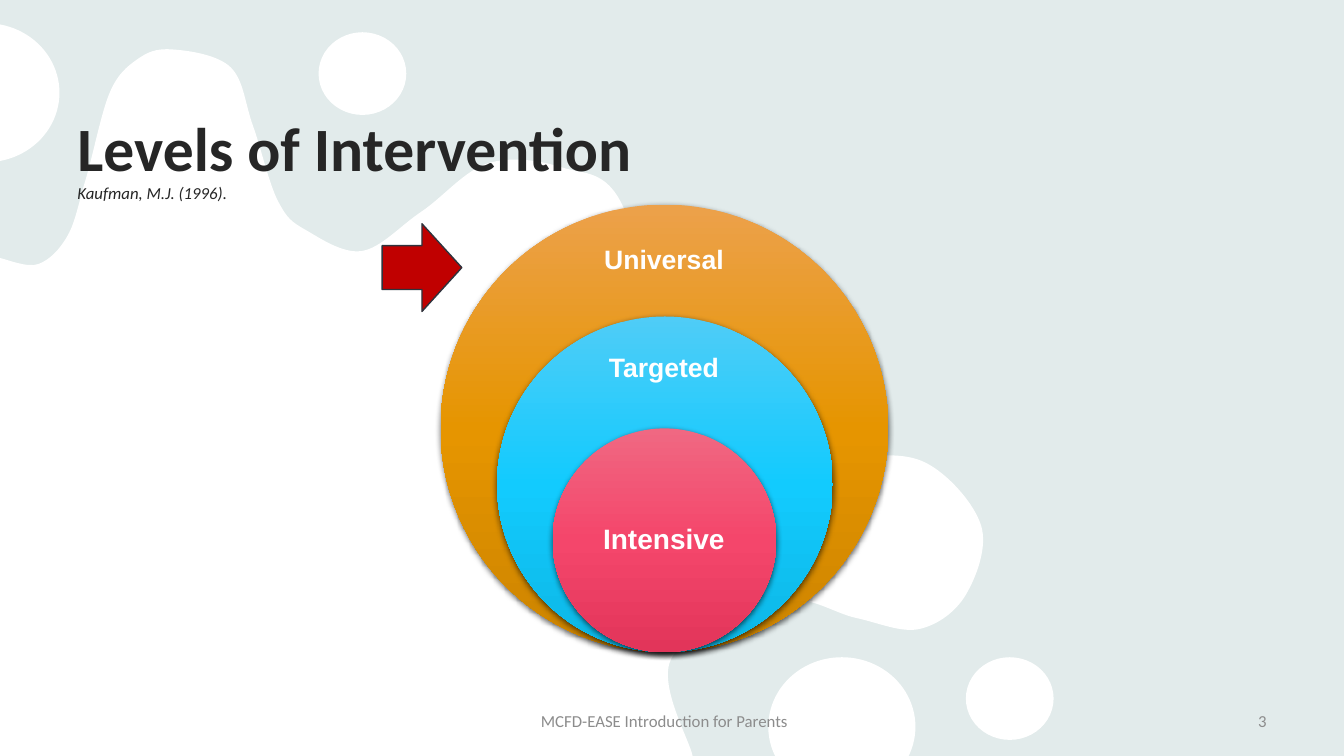
from copy import deepcopy
from dataclasses import dataclass

from lxml import etree
from pptx import Presentation
from pptx import util as u
from pptx.dml.color import RGBColor
from pptx.enum import shapes, text
from pptx.oxml.ns import qn

PX = u.Inches(1) // 100  # EMU in one px, 100 px to the inch
WIDTH, HEIGHT = 1333, 750


@dataclass(frozen=True)
class Theme:
    backdrop: str = "E9F3F3"
    veil: str = "AEAEAE"
    white: str = "FFFFFF"
    ink: str = "262626"
    muted: str = "8C8C8C"
    arrow: str = "C00000"
    arrow_edge: str = "2F333D"
    shadow: str = "000000"
    universal: tuple = ("ECA14B", "E69500", "CC8400")
    targeted: tuple = ("4FCCF7", "12CBFE", "0DB6E5")
    intensive: tuple = ("F06882", "F4466B", "E2355A")
    body_font: str = "Calibri"
    label_font: str = "Arial"
    title_size: int = 44
    small_size: int = 12
    label_size: int = 19
    core_size: int = 20


THEME = Theme()

# Points on the edge of the white wave, from the left side to the bottom
WAVE = [(0, 256), (38, 262), (67, 234), (85, 178), (108, 94), (136, 59), (170, 49),
        (229, 67), (251, 125), (276, 200), (303, 228), (359, 249), (418, 210),
        (484, 162), (557, 166), (618, 205), (660, 389), (758, 455), (844, 452),
        (918, 459), (973, 521), (958, 590), (912, 624), (849, 613), (771, 596),
        (666, 653), (687, 750)]
SMALL_DROP, LARGE_DROP = (87, 82), (146, 138)


def px(*lengths):
    return [u.Emu(length * PX) for length in lengths]


def rgb(color):
    return RGBColor.from_string(color)


def paint(solid, color):
    solid.shadow.inherit = False
    solid.fill.solid()
    solid.fill.fore_color.rgb = rgb(color)
    solid.line.fill.background()


def add_solid(parent, kind, box, color):
    solid = parent.add_shape(kind, *px(*box))
    paint(solid, color)
    return solid


def add_veil(parent):
    """Tint the whole slide with a layer of 10 % opacity."""
    veil = add_solid(parent, shapes.MSO_SHAPE.RECTANGLE, (0, 0, WIDTH, HEIGHT), THEME.veil)
    color = next(veil._element.iter(qn("a:srgbClr")))
    etree.SubElement(color, qn("a:alpha"), val="10000")


def smooth(points):
    """Give two control points and an end point for each step of a Catmull-Rom curve."""
    padded = [points[0], *points, points[-1]]
    curve = []
    for before, start, end, after in zip(padded, padded[1:], padded[2:], padded[3:]):
        curve.append([s + (e - b) / 6 for b, s, e in zip(before, start, end)])
        curve.append([e - (a - s) / 6 for s, e, a in zip(start, end, after)])
        curve.append(end)
    return curve


def add_wave(parent, points, color):
    """Fill the area between a smooth edge and the lower left corner of the slide."""
    curve = smooth(points)
    builder = parent.build_freeform(*points[0], scale=PX)
    builder.add_line_segments([*curve, (0, HEIGHT)], close=True)
    wave = builder.convert_to_shape()
    paint(wave, color)
    lines = list(wave._element.iter(qn("a:lnTo")))
    for first in range(0, len(curve), 3):
        bend = etree.Element(qn("a:cubicBezTo"))
        lines[first].addprevious(bend)
        for line in lines[first:first + 3]:
            bend.append(line[0])
            line.getparent().remove(line)


def add_text(parent, box, lines, *, font=THEME.body_font, color=THEME.ink, inset=(10, 5),
             align=text.PP_ALIGN.LEFT, anchor=text.MSO_ANCHOR.MIDDLE, spacing=1.0):
    """Place one paragraph; lines holds (words, size, bold, italic), a break between them."""
    frame = parent.add_textbox(*px(*box)).text_frame
    frame.word_wrap = True
    frame.vertical_anchor = anchor
    frame.margin_left = frame.margin_right = inset[0] * PX
    frame.margin_top = frame.margin_bottom = inset[1] * PX
    paragraph = frame.paragraphs[0]
    paragraph.alignment = align
    paragraph.line_spacing = spacing
    for index, (words, size, bold, italic) in enumerate(lines):
        if index:
            paragraph.add_line_break()
        run = paragraph.add_run()
        run.text = words
        run.font.name = font
        run.font.size = u.Pt(size)
        run.font.bold = bold
        run.font.italic = italic
        run.font.color.rgb = rgb(color)


def add_level(parent, diameter, gradient, label, label_box, size, inset):
    """Add one circle, resting on the common bottom point, and its label."""
    center, bottom = 659, 647
    box = (center - diameter // 2, bottom - diameter, diameter, diameter)
    level = add_solid(parent, shapes.MSO_SHAPE.OVAL, box, gradient[0])
    level.fill.gradient()
    level.fill.gradient_angle = 270
    stops = next(level._element.iter(qn("a:gsLst")))
    stops.append(deepcopy(stops[-1]))
    for stop, color, position in zip(level.fill.gradient_stops, gradient, (0, 0.5, 1)):
        stop.color.rgb = rgb(color)
        stop.position = position

    effects = next(level._element.iter(qn("a:effectLst")))
    shadow = etree.SubElement(effects, qn("a:outerShdw"), blurRad=str(u.Pt(4.5)),
                              dist=str(u.Pt(1.5)), dir="5400000", rotWithShape="0")
    color = etree.SubElement(shadow, qn("a:srgbClr"), val=THEME.shadow)
    etree.SubElement(color, qn("a:alpha"), val="63000")

    add_text(parent, label_box, [(label, size, True, False)], font=THEME.label_font,
             color=THEME.white, inset=(inset, inset), align=text.PP_ALIGN.CENTER, spacing=0.9)


def main():
    deck = Presentation()
    deck.slide_width, deck.slide_height = px(WIDTH, HEIGHT)
    slide = deck.slides.add_slide(deck.slide_layouts[6])
    slide.background.fill.solid()
    slide.background.fill.fore_color.rgb = rgb(THEME.backdrop)
    canvas = slide.shapes

    add_veil(canvas)
    add_wave(canvas, WAVE, THEME.white)
    for corner, drop in (((-87, 23), LARGE_DROP), ((316, 32), SMALL_DROP),
                         ((762, 652), LARGE_DROP), ((958, 652), SMALL_DROP)):
        add_solid(canvas, shapes.MSO_SHAPE.OVAL, corner + drop, THEME.white)

    add_text(canvas, (67, 61, 1200, 145),
             [("Levels of Intervention", THEME.title_size, True, False),
              ("Kaufman, M.J. (1996).", THEME.small_size, False, True)],
             anchor=text.MSO_ANCHOR.BOTTOM, spacing=0.9)
    for words, box, align in (
        ("MCFD-EASE Introduction for Parents", (470, 695, 378, 40), text.PP_ALIGN.CENTER),
        ("3", (1108, 695, 158, 40), text.PP_ALIGN.RIGHT),
    ):
        add_text(canvas, box, [(words, THEME.small_size, False, False)],
                 color=THEME.muted, align=align)

    arrow = add_solid(canvas, shapes.MSO_SHAPE.RIGHT_ARROW, (379, 222, 79, 87), THEME.arrow)
    arrow.line.color.rgb = rgb(THEME.arrow_edge)
    arrow.line.width = u.Pt(1)

    levels = canvas.add_group_shape().shapes
    for level in (
        (444, THEME.universal, "Universal", (581, 225, 155, 67), THEME.label_size, 15),
        (333, THEME.targeted, "Targeted", (581, 335, 155, 62), THEME.label_size, 15),
        (222, THEME.intensive, "Intensive", (580, 481, 157, 111), THEME.core_size, 16),
    ):
        add_level(levels, *level)
    deck.save("out.pptx")


if __name__ == "__main__":
    main()
